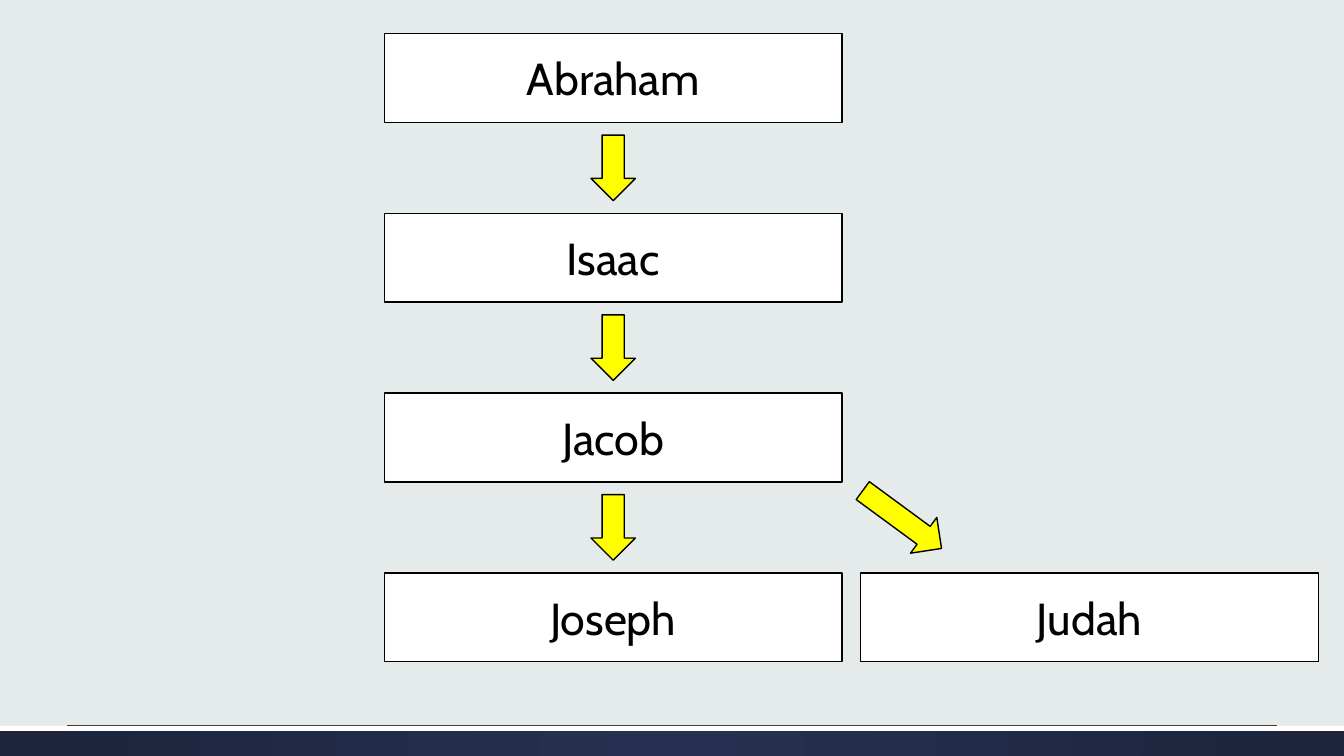
from lxml import etree
from pptx import Presentation
from pptx.dml.color import RGBColor
from pptx.enum.shapes import MSO_CONNECTOR, MSO_SHAPE
from pptx.enum.text import MSO_ANCHOR, PP_ALIGN
from pptx.oxml import parse_xml
from pptx.oxml.ns import nsdecls, qn
from pptx.util import Pt

BACKGROUND = RGBColor(0xE5, 0xEA, 0xEA)
WHITE = RGBColor(0xFF, 0xFF, 0xFF)
BLACK = RGBColor(0x00, 0x00, 0x00)
YELLOW = RGBColor(0xFF, 0xFF, 0x00)
NAVY_CENTRE = RGBColor(0x26, 0x30, 0x50)
NAVY_EDGE = RGBColor(0x1D, 0x24, 0x3C)
RULE_GREY = RGBColor(0x40, 0x40, 0x40)

PAGE_WIDTH, PAGE_HEIGHT = 960, 540
BAND_TOP = 518.4
BOX_LEFT, BOX_TOP, BOX_WIDTH, BOX_HEIGHT = 274.5, 24, 327, 63.4
ROW_PITCH = 128.4
JUDAH_LEFT = 614.8
ARROW_WIDTH, ARROW_HEIGHT = 31.7, 46.8


def add_plain_shape(page, kind, left, top, width, height, color, outlined=True):
    shape = page.shapes.add_shape(kind, Pt(left), Pt(top), Pt(width), Pt(height))
    shape.shadow.inherit = False
    shape.fill.solid()
    shape.fill.fore_color.rgb = color
    if outlined:
        shape.line.color.rgb = BLACK
        shape.line.width = Pt(1)
    else:
        shape.line.fill.background()
    return shape


def add_name_box(page, name, left, row):
    box = add_plain_shape(page, MSO_SHAPE.RECTANGLE, left, BOX_TOP + row * ROW_PITCH,
                          BOX_WIDTH, BOX_HEIGHT, WHITE)
    box.text_frame.vertical_anchor = MSO_ANCHOR.MIDDLE
    para = box.text_frame.paragraphs[0]
    para.alignment = PP_ALIGN.CENTER
    span = para.add_run()
    span.text = name
    span.font.name = "Cabin"
    span.font.size = Pt(32)
    span.font.color.rgb = BLACK


def add_arrow(page, left, top, height, rotation=0):
    arrow = add_plain_shape(page, MSO_SHAPE.DOWN_ARROW, left, top, ARROW_WIDTH, height, YELLOW)
    arrow.rotation = rotation


def add_footer(page):
    band = add_plain_shape(page, MSO_SHAPE.RECTANGLE, 0, BAND_TOP, PAGE_WIDTH,
                           PAGE_HEIGHT - BAND_TOP, NAVY_EDGE, outlined=False)
    # Radial gradient, lighter in the centre
    band.fill.gradient()
    for stop, position, color in zip(band.fill.gradient_stops, (0, 1), (NAVY_CENTRE, NAVY_EDGE)):
        stop.position = position
        stop.color.rgb = color
    gradient = band.element.spPr.find(qn("a:gradFill"))
    gradient.replace(gradient.find(qn("a:lin")), parse_xml(
        f'<a:path {nsdecls("a")} path="circle">'
        '<a:fillToRect l="50000" t="50000" r="50000" b="50000"/></a:path>'))

    add_plain_shape(page, MSO_SHAPE.RECTANGLE, 0, BAND_TOP, PAGE_WIDTH, 3.6, WHITE, outlined=False)

    rule = page.shapes.add_connector(MSO_CONNECTOR.STRAIGHT, Pt(48), Pt(518), Pt(912), Pt(518))
    rule.line.color.rgb = RULE_GREY
    rule.line.width = Pt(0.5)
    etree.SubElement(rule.element.spPr, qn("a:effectLst"))


def main():
    deck = Presentation()
    deck.slide_width, deck.slide_height = Pt(PAGE_WIDTH), Pt(PAGE_HEIGHT)
    page = deck.slides.add_slide(deck.slide_layouts[6])
    page.background.fill.solid()
    page.background.fill.fore_color.rgb = BACKGROUND
    add_footer(page)

    # Line of descent
    names = ["Abraham", "Isaac", "Jacob", "Joseph"]
    for row, name in enumerate(names):
        add_name_box(page, name, BOX_LEFT, row)
    add_name_box(page, "Judah", JUDAH_LEFT, len(names) - 1)

    # Arrows centred in the gaps between boxes
    arrow_left = BOX_LEFT + (BOX_WIDTH - ARROW_WIDTH) / 2
    arrow_top = BOX_TOP + (BOX_HEIGHT + ROW_PITCH - ARROW_HEIGHT) / 2
    for row in range(len(names) - 1):
        add_arrow(page, arrow_left, arrow_top + row * ROW_PITCH, ARROW_HEIGHT)

    # Branch from Jacob to Judah
    add_arrow(page, 628.6, 336.2, 69.8, rotation=306.3)
    deck.save("out.pptx")


if __name__ == "__main__":
    main()
